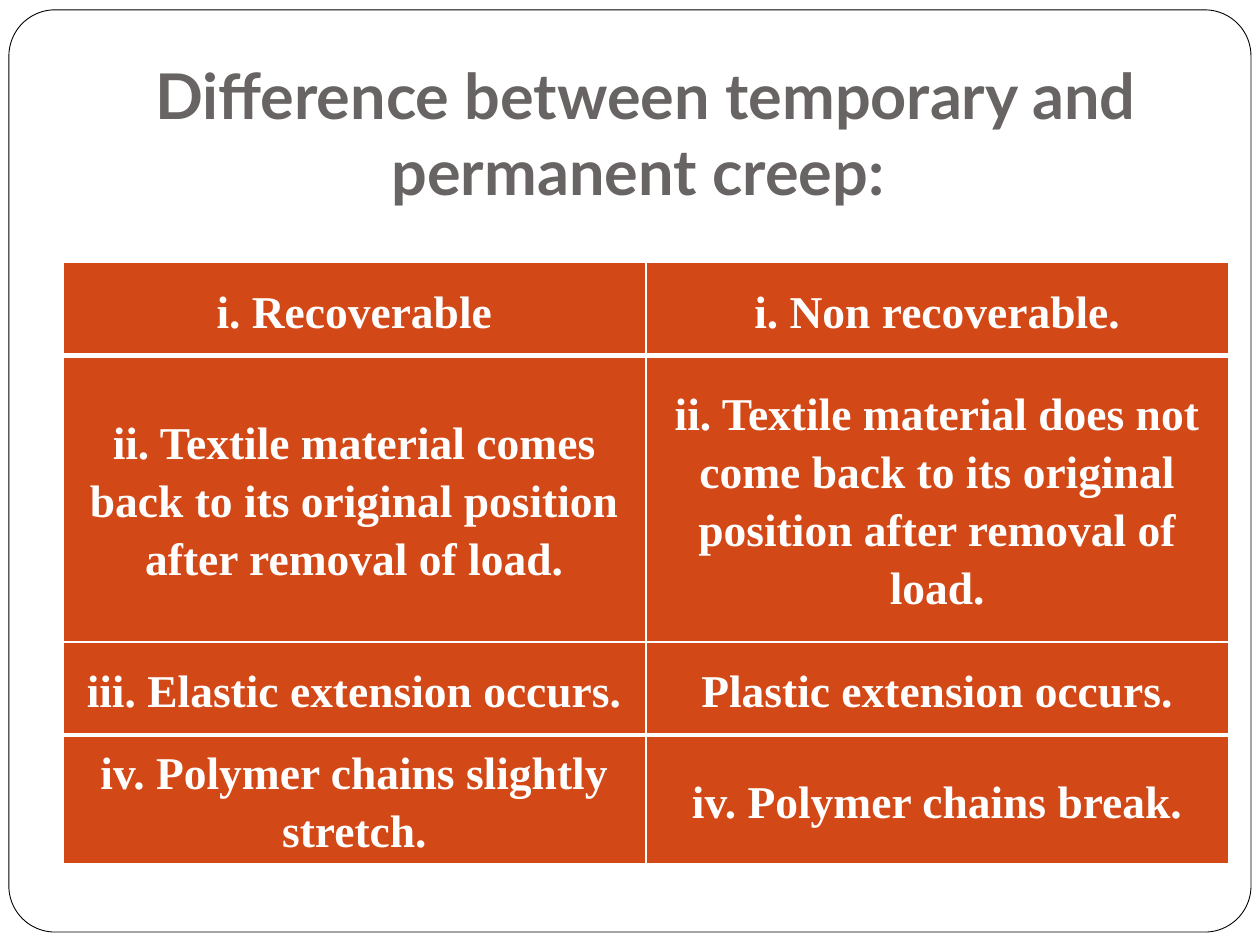
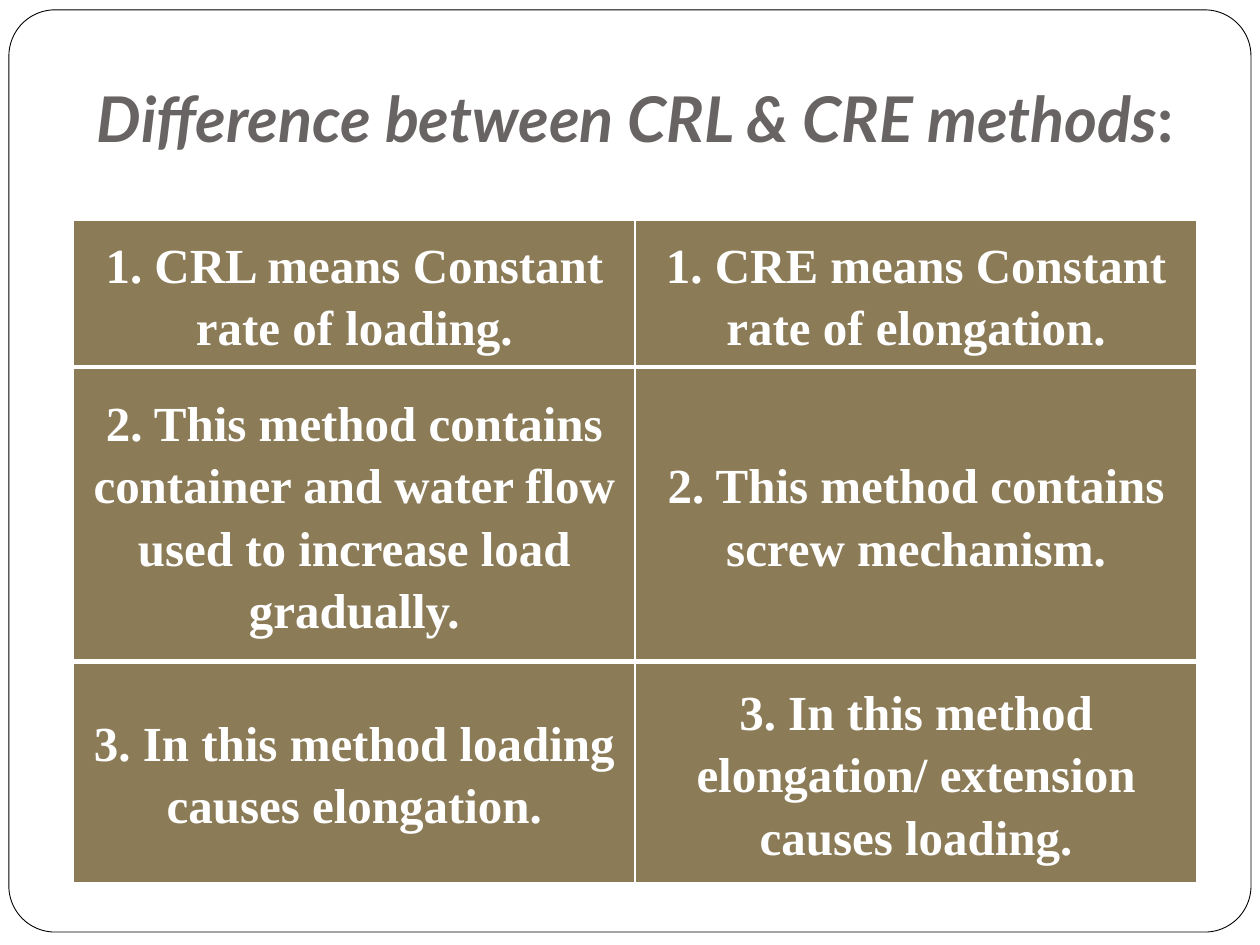
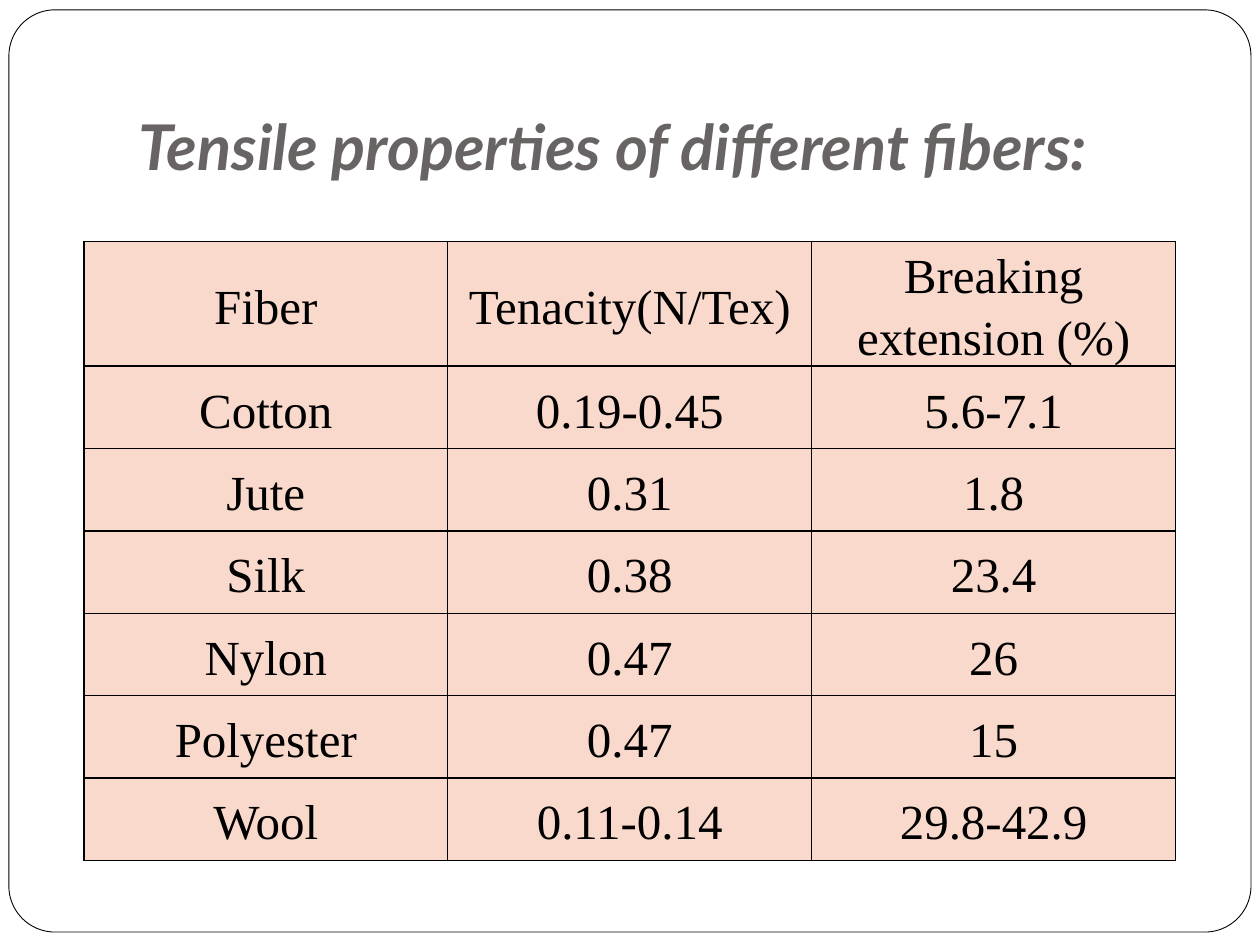
import pptx
import pptx.dml.color
import pptx.enum.shapes
import pptx.enum.text
import pptx.oxml
import pptx.oxml.ns
import pptx.util
from pptx.util import Cm, Pt

COLOURS = {
    "white": "FFFFFF",
    "black": "000000",
    "title": "696464",
    "creep": "D34817",
    "methods": "8B7B57",
    "fibers": "FAD9CD",
}
TITLE_FONT = "Lato"
TABLE_FONT = "Times New Roman"
TITLE_ONLY = 5


def colour(name):
    return pptx.dml.color.RGBColor.from_string(COLOURS[name])


class Builder:
    """Holds the deck's style and the slide being built."""

    def __init__(self):
        self.deck = pptx.Presentation()
        self.deck.slide_width = Cm(25.4)
        self.deck.slide_height = Cm(19.05)
        self.layout = self.deck.slide_layouts[TITLE_ONLY]
        self.slide = None

    def add_slide(self):
        self.slide = self.deck.slides.add_slide(self.layout)

    def add_shared_frame(self):
        """Draw the rounded page frame and hand it to the layout."""
        frame = self.slide.shapes.add_shape(
            pptx.enum.shapes.MSO_SHAPE.ROUNDED_RECTANGLE,
            Cm(0.18), Cm(0.2), Cm(25.04), Cm(18.59))
        frame.adjustments[0] = 0.05
        frame.shadow.inherit = False
        frame.fill.solid()
        frame.fill.fore_color.rgb = colour("white")
        frame.line.color.rgb = colour("black")
        frame.line.width = Pt(0.5)
        self.layout.shapes.element.insert(2, frame.element)

    def format_span(self, span, font, size, ink, bold, italic=False):
        span.font.name = font
        span.font.size = Pt(size)
        span.font.color.rgb = colour(ink)
        span.font.bold = bold
        span.font.italic = italic

    def add_title(self, parts, left, width, height, align="CENTER"):
        """Fill the title; parts are (text, italic) pairs."""
        box = self.slide.shapes.title
        box.left, box.top = Cm(left), Cm(0.76)
        box.width, box.height = Cm(width), Cm(height)
        frame = box.text_frame
        frame.word_wrap = True
        frame.auto_size = pptx.enum.text.MSO_AUTO_SIZE.NONE
        frame.vertical_anchor = pptx.enum.text.MSO_ANCHOR.BOTTOM
        frame.margin_left = frame.margin_right = frame.margin_bottom = Cm(0.25)
        frame.margin_top = Cm(0.13)
        para = frame.paragraphs[0]
        para.alignment = pptx.enum.text.PP_ALIGN[align]
        for text, italic in parts:
            span = para.add_run()
            span.text = text
            self.format_span(span, TITLE_FONT, 36, "title", True, italic)

    def add_border(self, cell, side, width, ink):
        line = pptx.oxml.parse_xml(
            f'<a:ln{side} {pptx.oxml.ns.nsdecls("a")} w="{Pt(width)}">'
            f'<a:solidFill><a:srgbClr val="{COLOURS[ink]}"/></a:solidFill>'
            f'</a:ln{side}>')
        cell._tc.get_or_add_tcPr().append(line)

    def add_table(self, rows, left, top, width, heights, rules, fill,
                  ink="white", border="white", size=28, bold=True,
                  margins=(0.18, 0)):
        """Add a table; rules are the widths of its horizontal lines."""
        count = len(rows[0])
        table = self.slide.shapes.add_table(
            len(rows), count, Cm(left), Cm(top), Cm(width),
            Cm(sum(heights))).table
        table.first_row = table.horz_banding = False
        for column in table.columns:
            column.width = Cm(width / count)
        for index, (texts, height) in enumerate(zip(rows, heights)):
            table.rows[index].height = Cm(height)
            for column, text in enumerate(texts):
                cell = table.cell(index, column)
                # Borders come before the fill in the cell properties
                for side, line_width in (("L", 1), ("R", 1),
                                         ("T", rules[index]),
                                         ("B", rules[index + 1])):
                    self.add_border(cell, side, line_width, border)
                cell.fill.solid()
                cell.fill.fore_color.rgb = colour(fill)
                cell.margin_left = cell.margin_right = Cm(margins[0])
                cell.margin_top = cell.margin_bottom = Cm(margins[1])
                cell.vertical_anchor = pptx.enum.text.MSO_ANCHOR.MIDDLE
                para = cell.text_frame.paragraphs[0]
                para.text = text
                para.alignment = pptx.enum.text.PP_ALIGN.CENTER
                para.line_spacing = 1.15
                self.format_span(para.runs[0], TABLE_FONT, size, ink, bold)


def main():
    builder = Builder()

    # Temporary and permanent creep
    builder.add_slide()
    builder.add_shared_frame()
    builder.add_title(
        [("Difference between temporary and permanent creep: ", False)],
        1.9, 22.23, 3.68)
    builder.add_table(
        [("i. Recoverable", "i. Non recoverable."),
         ("ii. Textile material comes back to its original position "
          "after removal of load.",
          "ii. Textile material does not come back to its original position "
          "after removal of load."),
         ("iii. Elastic extension occurs.", "Plastic extension occurs."),
         ("iv. Polymer chains slightly stretch.",
          "iv. Polymer chains break.")],
        1.27, 5.29, 23.5, [1.88, 5.77, 1.88, 2.59], [1, 3, 1, 3, 1],
        "creep", size=26, margins=(0.25, 0.13))

    # CRL and CRE methods
    builder.add_slide()
    builder.add_title(
        [("Difference between CRL & CRE methods", True), (":", False)],
        1.48, 22.65, 2.62)
    builder.add_table(
        [("1. CRL means Constant rate of loading.",
          "1. CRE means Constant rate of elongation."),
         ("2. This method contains container and water flow used to "
          "increase load gradually.",
          "2. This method contains screw mechanism."),
         ("3. In this method loading causes elongation.",
          "3. In this method elongation/ extension causes loading.")],
        1.48, 4.45, 22.65, [2.95, 5.94, 4.45], [1, 3, 3, 1], "methods")

    # Tensile properties
    builder.add_slide()
    builder.add_title([("Tensile properties of different fibers:", True)],
                      2.54, 21.59, 3.18, align="LEFT")
    fibers = [
        ("Fiber", "Tenacity(N/Tex)", "Breaking extension (%)"),
        ("Cotton", "0.19-0.45", "5.6-7.1"),
        ("Jute", "0.31", "1.8"),
        ("Silk", "0.38", "23.4"),
        ("Nylon", "0.47", "26"),
        ("Polyester", "0.47", "15"),
        ("Wool", "0.11-0.14", "29.8-42.9"),
    ]
    builder.add_table(
        fibers, 1.69, 4.87, 22.01, [2.5] + [1.66] * (len(fibers) - 1),
        [1] * (len(fibers) + 1), "fibers", ink="black", border="black",
        bold=False)

    builder.deck.save("out.pptx")


if __name__ == "__main__":
    main()
